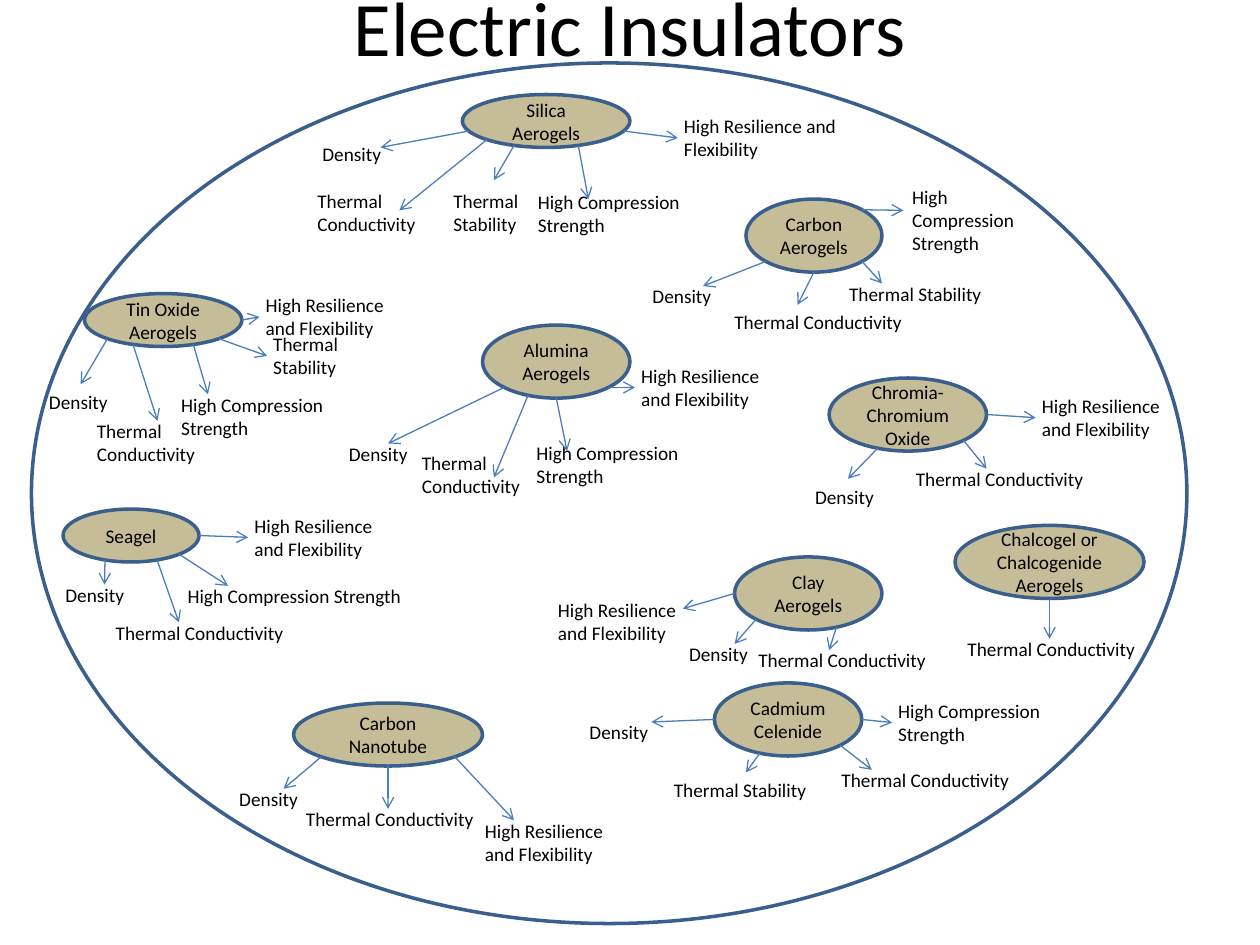
import math
from dataclasses import dataclass
from typing import NamedTuple, Optional

from lxml import etree
from pptx import Presentation
from pptx import util as u
from pptx.dml.color import RGBColor
from pptx.enum import shapes, text
from pptx.oxml.ns import qn

COLOURS = {"paper": "FFFFFF", "tan": "C4BD97", "outline": "3A5F8C", "arrow": "4B7EBC", "ink": "000000"}
LABEL_FONT = {"name": "Calibri", "size": u.Pt(11)}
TITLE_FONT = {"name": "Calibri", "size": u.Pt(44)}
LABEL_FRAME = {"word_wrap": True, "vertical_anchor": text.MSO_ANCHOR.TOP}
CENTRED_FRAME = {"word_wrap": True, "vertical_anchor": text.MSO_ANCHOR.MIDDLE}

# Points on an oval where arrows start, clockwise from the right
COMPASS = "E ESE SE SSE S SSW SW WSW W WNW NW NNW N NNE NE ENE".split()
SLIM, TALL = 0.42, 0.58


class Label(NamedTuple):
    wording: str
    width: float
    lines: int = 1

    @property
    def height(self) -> float:
        return 0.1 + 0.185 * self.lines


DENSITY = Label("Density", 0.71)
CONDUCTIVITY = Label("Thermal Conductivity", 1.67)
CONDUCTIVITY_FOLDED = Label("Thermal Conductivity", 1.17, 2)
CONDUCTIVITY_SPLIT = Label("Thermal\nConductivity", 1.08, 2)
STABILITY = Label("Thermal Stability", 1.33)
STABILITY_FOLDED = Label("Thermal Stability", 0.83, 2)
STRENGTH = Label("High Compression Strength", 2.08)
STRENGTH_FOLDED = Label("High Compression Strength", 1.33, 2)
STRENGTH_SPLIT = Label("High Compression\nStrength", 1.33, 2)
STRENGTH_NARROW = Label("High Compression Strength", 1.25, 3)
RESILIENCE = Label("High Resilience and Flexibility", 1.25, 2)
RESILIENCE_WIDE = Label("High Resilience and Flexibility", 1.42, 2)


@dataclass
class Property:
    """A label in inches; its arrow ends along and drop from the corner, or at the left middle."""
    label: Label
    left: float
    top: float
    start: str
    along: Optional[float] = None
    drop: float = 0.06

    def tip(self) -> tuple[float, float]:
        if self.along is None:
            return self.left + 0.05, self.top + self.label.height / 2
        return self.left + self.along, self.top + self.drop


@dataclass
class Material:
    """An oval, in inches, with its properties."""
    name: str
    left: float
    top: float
    width: float
    height: float
    properties: list[Property]

    def edge(self, direction: str) -> tuple[float, float]:
        angle = math.tau * COMPASS.index(direction) / len(COMPASS)
        return (self.left + self.width / 2 * (1 + math.cos(angle)),
                self.top + self.height / 2 * (1 + math.sin(angle)))


MATERIALS = [
    Material("Silica Aerogels", 3.67, 0.75, 1.33, SLIM, [
        Property(DENSITY, 2.46, 1.08, "WSW", 0.56, 0.09),
        Property(CONDUCTIVITY_FOLDED, 2.42, 1.45, "SW", 0.75, 0.22),
        Property(STABILITY_FOLDED, 3.5, 1.45, "SSW", 0.42, -0.02),
        Property(STRENGTH_SPLIT, 4.17, 1.46, "SSE", 0.5, 0.12),
        Property(RESILIENCE_WIDE, 5.33, 0.86, "ESE"),
    ]),
    Material("Carbon Aerogels", 5.92, 1.58, 1.08, TALL, [
        Property(DENSITY, 5.08, 2.21, "SW", 0.5),
        Property(CONDUCTIVITY, 5.73, 2.41, "S", 0.6, 0.01),
        Property(STABILITY, 6.64, 2.19, "SE", 0.36),
        Property(STRENGTH_NARROW, 7.14, 1.42, "NE", 0.03, 0.25),
    ]),
    Material("Tin Oxide Aerogels", 0.67, 2.33, 1.25, SLIM, [
        Property(DENSITY, 0.29, 3.05, "SW", 0.35, 0),
        Property(CONDUCTIVITY_SPLIT, 0.67, 3.28, "SSW", 0.58),
        Property(STRENGTH_FOLDED, 1.34, 3.07, "SSE", 0.31),
        Property(STABILITY_FOLDED, 2.07, 2.59, "SE"),
        Property(RESILIENCE, 2.01, 2.28, "E"),
    ]),
    Material("Alumina Aerogels", 3.83, 2.58, 1.17, TALL, [
        Property(DENSITY, 2.67, 3.46, "SW", 0.41),
        Property(CONDUCTIVITY_FOLDED, 3.25, 3.53, "SSW", 0.67, 0.26),
        Property(STRENGTH_FOLDED, 4.16, 3.45, "S", 0.34, 0.13),
        Property(RESILIENCE, 4.99, 2.84, "SE"),
    ]),
    Material("Chromia-Chromium Oxide", 6.58, 3, 1.25, TALL, [
        Property(DENSITY, 6.37, 3.8, "SSW", 0.36, 0),
        Property(CONDUCTIVITY, 7.17, 3.66, "SE", 0.66),
        Property(RESILIENCE, 8.17, 3.08, "E"),
    ]),
    Material("Seagel", 0.5, 4.04, 1.08, SLIM, [
        Property(DENSITY, 0.42, 4.58, "SSW", 0.41),
        Property(CONDUCTIVITY, 0.82, 4.88, "SSE", 0.6),
        Property(STRENGTH, 1.39, 4.59, "SE", 0.42),
        Property(RESILIENCE, 1.92, 4.03, "E"),
    ]),
    Material("Chalcogel or Chalcogenide Aerogels", 7.58, 4.17, 1.5, TALL, [
        Property(CONDUCTIVITY, 7.58, 5.01, "S", 0.75),
    ]),
    Material("Clay Aerogels", 5.83, 4.42, 1.17, TALL, [
        Property(RESILIENCE, 4.33, 4.7, "W", 1.09, 0.13),
        Property(DENSITY, 5.37, 5.05, "SW", 0.46),
        Property(CONDUCTIVITY, 5.92, 5.1, "SSE", 0.66),
    ]),
    Material("Cadmium Celenide", 5.67, 5.42, 1.17, TALL, [
        Property(DENSITY, 4.58, 5.67, "W", 0.59),
        Property(STABILITY, 5.25, 6.13, "SSW", 0.67, 0),
        Property(CONDUCTIVITY, 6.58, 6.05, "SE", 0.34),
        Property(STRENGTH_FOLDED, 7.03, 5.5, "E"),
    ]),
    Material("Carbon Nanotube", 2.33, 5.58, 1.5, 0.5, [
        Property(DENSITY, 1.8, 6.2, "SW", 0.45),
        Property(CONDUCTIVITY, 2.33, 6.36, "S", 0.75),
        Property(RESILIENCE, 3.75, 6.45, "SE", 0.33),
    ]),
]


def lengths(*inches: float) -> list[u.Length]:
    return [u.Cm(value * 2.54) for value in inches]


def colour(name: str) -> RGBColor:
    return RGBColor.from_string(COLOURS[name])


def apply(target, values: dict) -> None:
    for name, value in values.items():
        setattr(target, name, value)


def write(frame, wording: str, font: dict, layout: dict, align=text.PP_ALIGN.LEFT) -> None:
    apply(frame, layout)
    frame.text = wording
    for para in frame.paragraphs:
        para.alignment = align
        for span in para.runs:
            apply(span.font, font)
            span.font.color.rgb = colour("ink")


def draw_oval(page, place: tuple, fill: str, wording: str = "") -> None:
    oval = page.shapes.add_shape(shapes.MSO_SHAPE.OVAL, *lengths(*place))
    oval.shadow.inherit = False
    oval.fill.solid()
    oval.fill.fore_color.rgb = colour(fill)
    oval.line.color.rgb = colour("outline")
    oval.line.width = u.Pt(2)
    if wording:
        write(oval.text_frame, wording, LABEL_FONT, CENTRED_FRAME, text.PP_ALIGN.CENTER)


def draw_label(page, item: Property) -> None:
    box = page.shapes.add_textbox(*lengths(item.left, item.top, item.label.width, item.label.height))
    write(box.text_frame, item.label.wording, LABEL_FONT, LABEL_FRAME)


def draw_arrow(page, start: tuple, end: tuple) -> None:
    arrow = page.shapes.add_connector(shapes.MSO_CONNECTOR.STRAIGHT, *lengths(*start, *end))
    arrow.line.color.rgb = colour("arrow")
    arrow.line.width = u.Pt(0.75)
    line = arrow._element.spPr.find(qn("a:ln"))
    etree.SubElement(line, qn("a:tailEnd"), type="arrow")
    etree.SubElement(arrow._element.spPr, qn("a:effectLst"))


def main() -> None:
    deck = Presentation()
    deck.slide_width, deck.slide_height = lengths(10, 7.5)
    page = deck.slides.add_slide(deck.slide_layouts[5])
    # Title
    title = page.shapes.title
    title.left, title.top, title.width, title.height = lengths(0.5, -0.42, 9, 1.25)
    write(title.text_frame, "Electric Insulators", TITLE_FONT, CENTRED_FRAME, text.PP_ALIGN.CENTER)
    # Enclosing oval, then materials with their properties
    draw_oval(page, (0.25, 0.5, 9.17, 6.83), "paper")
    for material in MATERIALS:
        place = (material.left, material.top, material.width, material.height)
        draw_oval(page, place, "tan", material.name)
        for item in material.properties:
            draw_label(page, item)
            draw_arrow(page, material.edge(item.start), item.tip())
    deck.save("out.pptx")


if __name__ == "__main__":
    main()
